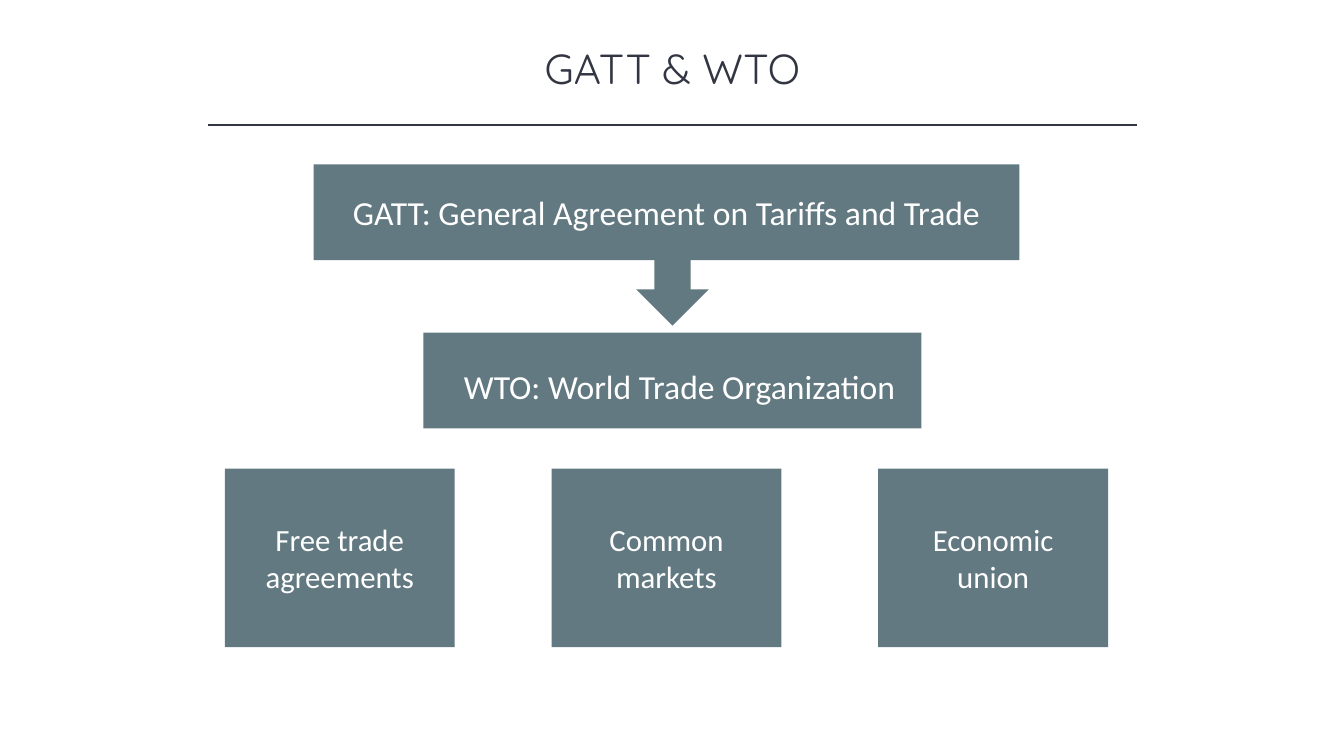
from dataclasses import dataclass
from pptx import Presentation
from pptx.dml.color import RGBColor as Rgb
from pptx.enum.shapes import MSO_CONNECTOR as Link, MSO_SHAPE as Kind
from pptx.enum.text import MSO_ANCHOR as Anchor, PP_ALIGN as Align
from pptx.oxml.ns import qn
from pptx.util import Inches, Pt
from lxml import etree


@dataclass(frozen=True)
class Theme:
    ink: Rgb = Rgb.from_string("323542")
    slate: Rgb = Rgb.from_string("627981")
    white: Rgb = Rgb.from_string("FFFFFF")
    head: str = "Quicksand"
    body: str = "Calibri"
    title: int = 30
    bar: int = 24
    card: int = 22


LOOK = Theme()


def write(shape, text, name, size, color, anchor=Anchor.MIDDLE, pads=(0.1, 0.05, 0.1, 0.05)):
    """Put centred text in a shape; pads are left, top, right, bottom."""
    frame = shape.text_frame
    left, top, right, bottom = map(Inches, pads)
    setup = {"word_wrap": True, "vertical_anchor": anchor, "margin_left": left,
             "margin_top": top, "margin_right": right, "margin_bottom": bottom}
    for key, value in setup.items():
        setattr(frame, key, value)
    para = frame.paragraphs[0]
    para.alignment = Align.CENTER
    run = para.add_run()
    run.text = text
    for key, value in {"name": name, "size": Pt(size)}.items():
        setattr(run.font, key, value)
    run.font.color.rgb = color


def block(slide, kind, box):
    """Add a plain slate shape."""
    shape = slide.shapes.add_shape(kind, *map(Inches, box))
    shape.shadow.inherit = False
    shape.fill.solid()
    shape.fill.fore_color.rgb = LOOK.slate
    shape.line.fill.background()
    return shape


def header(slide, box, text):
    """Title with a rule below it."""
    left, top, width, height = box
    title = slide.shapes.add_textbox(*map(Inches, box))
    write(title, text, LOOK.head, LOOK.title, LOOK.ink, Anchor.TOP)
    start, level = left + 0.39, top + 0.87
    ends = (start, level, start + 9.22, level)
    rule = slide.shapes.add_connector(Link.STRAIGHT, *map(Inches, ends))
    rule.line.color.rgb = LOOK.ink
    rule.line.width = Pt(1)
    etree.SubElement(rule._element.spPr, qn("a:effectLst"))


def flow(slide, box, first, second):
    """Wide bar with an arrow down to a narrower bar."""
    left, top, width, height = box
    tall = 0.95
    lower = block(slide, Kind.RECTANGLE, (left + 1.09, top + height - tall, 4.94, tall))
    write(lower, second, LOOK.body, LOOK.bar, LOOK.white, pads=(0.39, 0.16, 0.25, 0.05))
    # The arrow starts behind the upper bar
    block(slide, Kind.DOWN_ARROW, (left + 3.2, top + 0.79, 0.72, 0.81))
    upper = block(slide, Kind.RECTANGLE, (left, top, width, tall))
    write(upper, first, LOOK.body, LOOK.bar, LOOK.white)


def cards(slide, box, labels):
    """Row of equal cards spread across the box."""
    left, top, width, height = box
    wide = 2.28
    step = (width - wide) / (len(labels) - 1)
    for i, label in enumerate(labels):
        card = block(slide, Kind.RECTANGLE, (left + i * step, top, wide, height))
        write(card, label, LOOK.body, LOOK.card, LOOK.white, pads=(0.33, 0.05, 0.33, 0.05))


def main():
    deck = Presentation()
    deck.slide_width, deck.slide_height = Inches(13.33), Inches(7.5)
    slide = deck.slides.add_slide(deck.slide_layouts[6])
    header(slide, (1.67, 0.37, 10, 0.61), "GATT & WTO")
    flow(slide, (3.11, 1.63, 7, 2.62),
         "GATT: General Agreement on Tariffs and Trade", "WTO: World Trade Organization")
    cards(slide, (2.23, 4.65, 8.76, 1.77),
          ("Free trade agreements", "Common markets", "Economic union"))
    deck.save("out.pptx")


if __name__ == "__main__":
    main()
